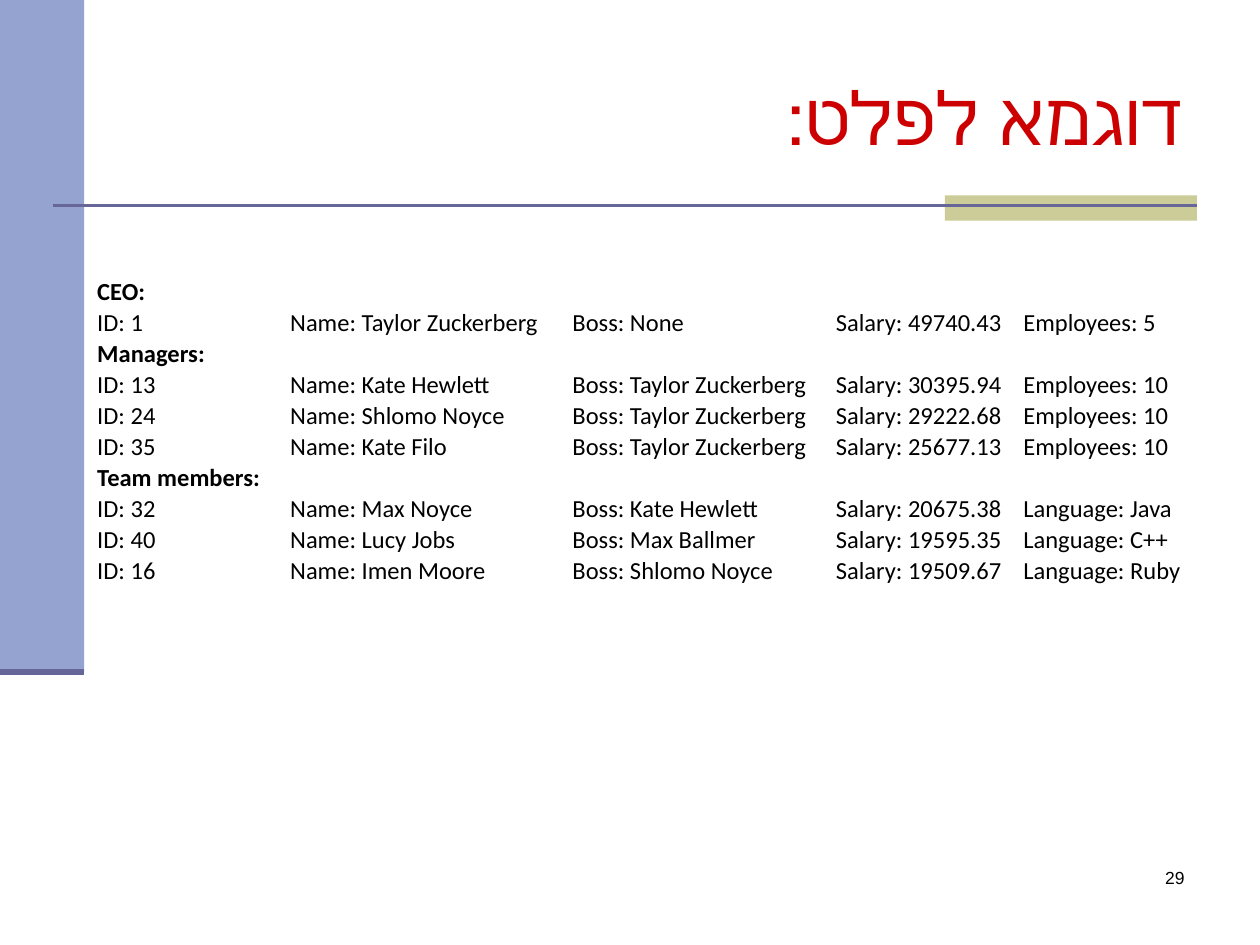
from lxml import etree
from pptx import Presentation
from pptx.dml.color import RGBColor
from pptx.enum.shapes import MSO_CONNECTOR, MSO_SHAPE
from pptx.enum.text import MSO_ANCHOR, PP_ALIGN
from pptx.oxml.ns import qn
from pptx.util import Cm, Pt

RECT = MSO_SHAPE.RECTANGLE
LINE = MSO_CONNECTOR.STRAIGHT
MIDDLE, BOTTOM = MSO_ANCHOR.MIDDLE, MSO_ANCHOR.BOTTOM
LEFT, RIGHT = PP_ALIGN.LEFT, PP_ALIGN.RIGHT


def color(code):
    return RGBColor.from_string(code)


def write(frame, text, font, size, code, align, bold=False):
    """Fill a text frame with one paragraph in one style."""
    frame.text = text
    para = frame.paragraphs[0]
    para.alignment = align
    for run in para.runs:
        run.font.name = font
        run.font.size = Pt(size)
        run.font.bold = bold
        run.font.color.rgb = color(code)
    return para


deck = Presentation()
deck.slide_width, deck.slide_height = Cm(25.4), Cm(19.05)
slide = deck.slides.add_slide(deck.slide_layouts[6])
shapes = slide.shapes

# Side bar and title accent
for x, y, w, h, code in [
    (0, 0, 1.7, 13.55, "95A3D1"),
    (19.05, 3.94, 5.08, 0.51, "CCCC99"),
]:
    bar = shapes.add_shape(RECT, Cm(x), Cm(y), Cm(w), Cm(h))
    bar.shadow.inherit = False
    bar.fill.solid()
    bar.fill.fore_color.rgb = color(code)
    bar.line.fill.background()

# Title rule and the foot of the side bar
for x1, x2, y, width in [(1.06, 24.13, 4.14, 1.5), (0, 1.7, 13.55, 3.5)]:
    rule = shapes.add_connector(LINE, Cm(x1), Cm(y), Cm(x2), Cm(y))
    rule.line.color.rgb = color("666699")
    rule.line.width = Pt(width)
    etree.SubElement(rule._element.spPr, qn("a:effectLst"))

# Title
title = shapes.add_textbox(Cm(2.54), Cm(0.76), Cm(21.59), Cm(3.18)).text_frame
title.word_wrap = True
title.vertical_anchor = MIDDLE
para = write(title, "דוגמא לפלט:", "Times New Roman", 42, "CC0000", RIGHT)
para._p.get_or_add_pPr().set("rtl", "1")

# Page number
page = shapes.add_textbox(Cm(18.85), Cm(17.35), Cm(5.28), Cm(1.27)).text_frame
page.word_wrap = True
write(page, "29", "Arial", 10, "000000", RIGHT)

# Staff table: a row with one entry is a heading
heads = ["ID", "Name", "Boss", "Salary"]
staff = [
    ("CEO:", "Employees", [
        ("1", "Taylor Zuckerberg", "None", "49740.43", "5"),
    ]),
    ("Managers:", "Employees", [
        ("13", "Kate Hewlett", "Taylor Zuckerberg", "30395.94", "10"),
        ("24", "Shlomo Noyce", "Taylor Zuckerberg", "29222.68", "10"),
        ("35", "Kate Filo", "Taylor Zuckerberg", "25677.13", "10"),
    ]),
    ("Team members:", "Language", [
        ("32", "Max Noyce", "Kate Hewlett", "20675.38", "Java"),
        ("40", "Lucy Jobs", "Max Ballmer", "19595.35", "C++"),
        ("16", "Imen Moore", "Shlomo Noyce", "19509.67", "Ruby"),
    ]),
]
rows = []
for group, last, people in staff:
    rows.append([group])
    for person in people:
        rows.append([f"{k}: {v}" for k, v in zip(heads + [last], person)])

widths = [3.89, 5.69, 5.31, 3.78, 3.56]
high = 0.62
table = shapes.add_table(
    len(rows), len(widths), Cm(1.93), Cm(5.56),
    Cm(sum(widths)), Cm(high * len(rows)),
).table
table.first_row = table.horz_banding = False
for col, width in zip(table.columns, widths):
    col.width = Cm(width)

for r, row in enumerate(rows):
    table.rows[r].height = Cm(high)
    for c in range(len(widths)):
        cell = table.cell(r, c)
        cell.fill.background()
        cell.vertical_anchor = BOTTOM
        cell.margin_left = cell.margin_right = cell.margin_top = Cm(0.03)
        cell.margin_bottom = 0
        if c < len(row):
            write(cell.text_frame, row[c], "Calibri", 14, "000000", LEFT,
                  bold=len(row) == 1)
        else:
            # Keep empty cells from stretching the row
            para = cell.text_frame.paragraphs[0]
            etree.SubElement(para._p, qn("a:endParaRPr"), sz="1400")

deck.save("out.pptx")
